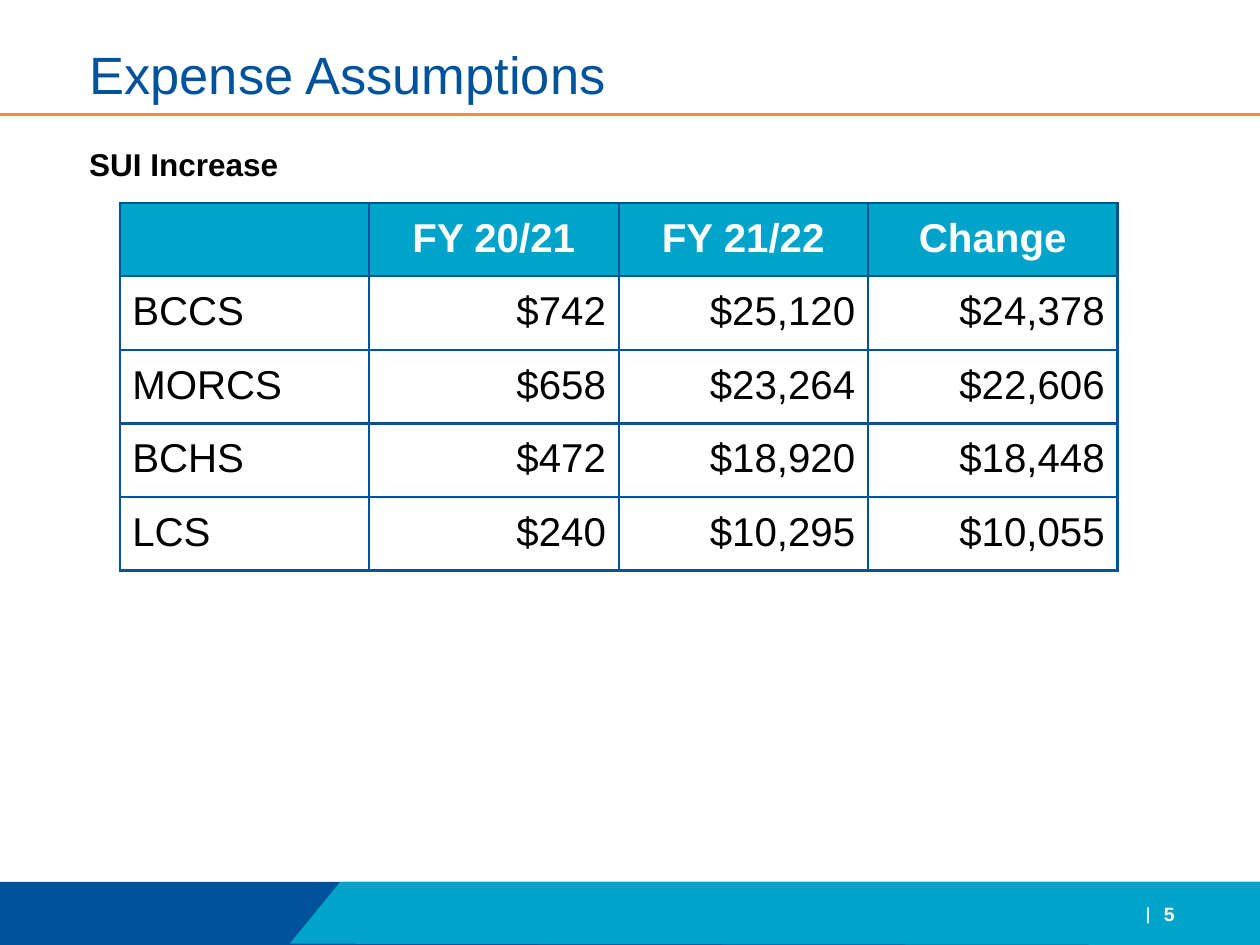
"""Build the expense assumptions slide with its SUI increase table."""
from dataclasses import dataclass

from lxml import etree
from pptx import Presentation
from pptx import util as u
from pptx.dml.color import RGBColor
from pptx.enum import shapes, text
from pptx.oxml import ns

COLORS = {
    "navy": "00539B",
    "cyan": "00A3C9",
    "orange": "FF893E",
    "white": "FFFFFF",
    "black": "000000",
}
ALIGN = text.PP_ALIGN
ANCHOR = text.MSO_ANCHOR
ROWS = [
    ["", "FY 20/21", "FY 21/22", "Change"],
    ["BCCS", "$742", "$25,120", "$24,378"],
    ["MORCS", "$658", "$23,264", "$22,606"],
    ["BCHS", "$472", "$18,920", "$18,448"],
    ["LCS", "$240", "$10,295", "$10,055"],
]
COLUMN_WIDTH, ROW_HEIGHT = 1.98, 0.56


@dataclass
class Style:
    """Describe the look of a paragraph."""
    size: float
    color: str
    bold: bool = False
    align: ALIGN = ALIGN.LEFT
    font: str = "Arial"


@dataclass
class Label:
    """Describe a text box."""
    words: str
    box: tuple[float, float, float, float]
    style: Style
    margins: tuple[float, float] = (0.1, 0.05)
    anchor: ANCHOR = ANCHOR.TOP
    wrap: bool = True


LABELS = [
    Label("|", (9, 7.11, 0.19, 0.29),
          Style(11, "white", True, ALIGN.CENTER, "Roboto"), wrap=False),
    Label("SUI Increase", (0.61, 1.04, 8.85, 2.62), Style(18, "black", True)),
    Label("5", (9.12, 7.1, 0.32, 0.3), Style(11, "white", True, ALIGN.CENTER),
          (0, 0), ANCHOR.MIDDLE),
]


def rgb(name: str) -> RGBColor:
    """Return a named colour."""
    return RGBColor.from_string(COLORS[name])


def style_paragraph(paragraph, style: Style) -> None:
    """Apply a style to a whole paragraph."""
    paragraph.alignment = style.align
    paragraph.font.name = style.font
    paragraph.font.size = u.Pt(style.size)
    paragraph.font.bold = style.bold
    paragraph.font.color.rgb = rgb(style.color)


def paint(shape, color: str) -> None:
    """Give a shape a flat fill without line or shadow."""
    shape.shadow.inherit = False
    shape.fill.solid()
    shape.fill.fore_color.rgb = rgb(color)
    shape.line.fill.background()


def draw_frame(slide) -> None:
    """Draw the footer band and the rule below the title."""
    band = slide.shapes.add_shape(
        shapes.MSO_SHAPE.RECTANGLE, 0, u.Inches(7), u.Inches(10), u.Inches(0.5))
    paint(band, "navy")
    builder = slide.shapes.build_freeform(
        u.Inches(2.7), u.Inches(7))
    corners = [(10, 7), (10, 7.5), (9.81, 7.5), (2.3, 7.49)]
    builder.add_line_segments([(u.Inches(x), u.Inches(y)) for x, y in corners])
    paint(builder.convert_to_shape(), "cyan")
    rule = slide.shapes.add_connector(
        shapes.MSO_CONNECTOR.STRAIGHT, 0, u.Inches(0.91), u.Inches(10), u.Inches(0.91))
    rule.line.color.rgb = rgb("orange")
    rule.line.width = u.Pt(1.5)
    etree.SubElement(rule._element.spPr, ns.qn("a:effectLst"))


def draw_title(slide) -> None:
    """Place and format the title."""
    title = slide.shapes.title
    title.left, title.top, title.width, title.height = map(
        u.Inches, (0.61, 0.19, 8.85, 0.85))
    frame = title.text_frame
    frame.text = "Expense Assumptions"
    frame.auto_size = text.MSO_AUTO_SIZE.NONE
    frame.vertical_anchor = ANCHOR.MIDDLE
    frame.paragraphs[0].line_spacing = 0.9
    style_paragraph(frame.paragraphs[0], Style(30, "navy"))


def draw_label(slide, label: Label) -> None:
    """Add a text box."""
    frame = slide.shapes.add_textbox(*map(u.Inches, label.box)).text_frame
    frame.word_wrap = label.wrap
    frame.vertical_anchor = label.anchor
    frame.margin_left = frame.margin_right = u.Inches(label.margins[0])
    frame.margin_top = frame.margin_bottom = u.Inches(label.margins[1])
    frame.text = label.words
    paragraph = frame.paragraphs[0]
    if label.style.size > 11:
        paragraph.line_spacing = 1.2
    style_paragraph(paragraph, label.style)


def add_borders(cell) -> None:
    """Line all four sides of a cell."""
    properties = cell._tc.get_or_add_tcPr()
    for side in ("lnL", "lnR", "lnT", "lnB"):
        line = etree.SubElement(properties, ns.qn(f"a:{side}"), w=str(u.Pt(1.5)))
        fill = etree.SubElement(line, ns.qn("a:solidFill"))
        etree.SubElement(fill, ns.qn("a:srgbClr"), val=COLORS["navy"])


def draw_table(slide) -> None:
    """Add the table of increases."""
    columns = len(ROWS[0])
    table = slide.shapes.add_table(
        len(ROWS), columns, u.Inches(0.95), u.Inches(1.61),
        u.Inches(COLUMN_WIDTH * columns), u.Inches(ROW_HEIGHT * len(ROWS))).table
    table.horz_banding = False
    for row, values in enumerate(ROWS):
        for column, value in enumerate(values):
            cell = table.cell(row, column)
            cell.margin_left = cell.margin_right = u.Inches(0.1)
            cell.margin_top = cell.margin_bottom = u.Inches(0.1)
            add_borders(cell)
            if row == 0:
                cell.fill.solid()
                cell.fill.fore_color.rgb = rgb("cyan")
                style = Style(23, "white", True, ALIGN.CENTER)
            else:
                cell.fill.background()
                style = Style(23, "black", align=ALIGN.RIGHT if column else ALIGN.LEFT)
            cell.text = value
            style_paragraph(cell.text_frame.paragraphs[0], style)


def main() -> None:
    """Build and save the presentation."""
    presentation = Presentation()
    presentation.slide_width, presentation.slide_height = u.Inches(10), u.Inches(7.5)
    slide = presentation.slides.add_slide(presentation.slide_layouts[5])
    draw_frame(slide)
    draw_title(slide)
    for label in LABELS:
        draw_label(slide, label)
    draw_table(slide)
    presentation.save("out.pptx")


if __name__ == "__main__":
    main()
